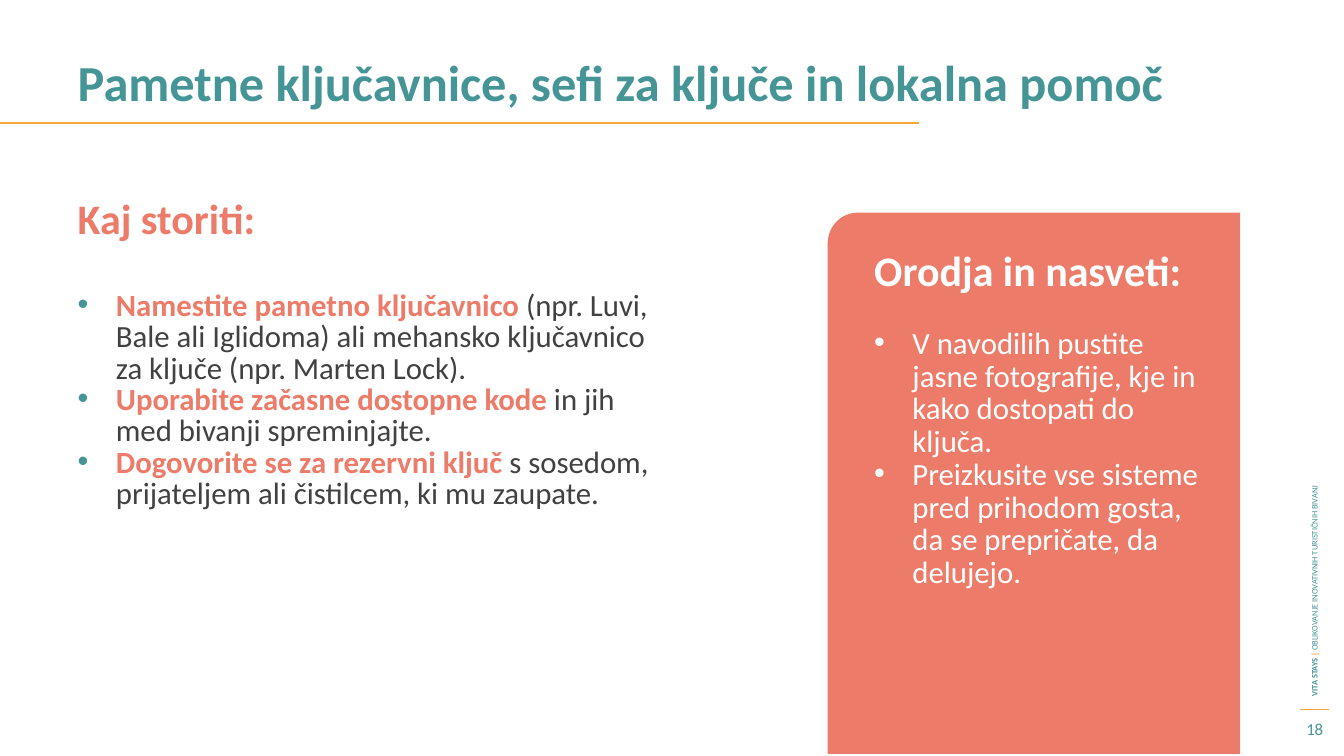
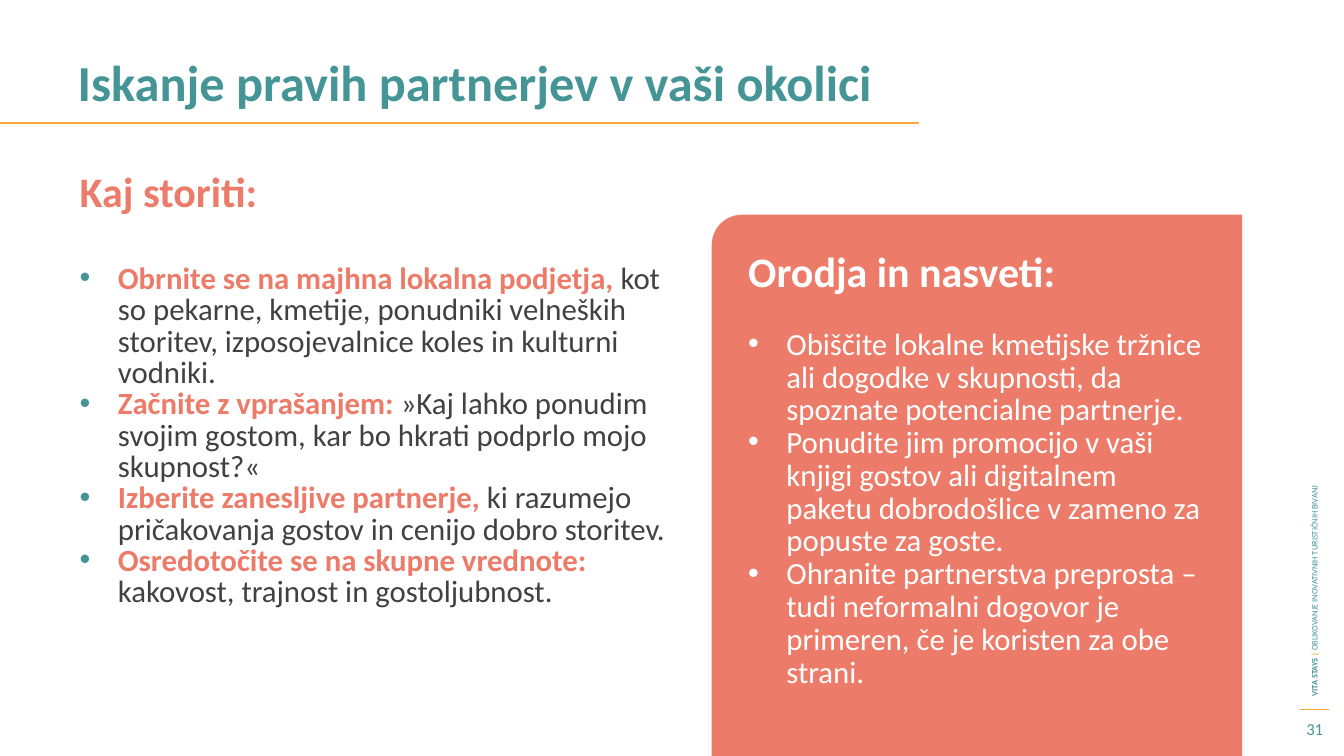
from lxml.etree import SubElement
from pptx import Presentation
from pptx.dml.color import RGBColor
from pptx.enum.shapes import MSO_CONNECTOR, MSO_SHAPE
from pptx.enum.text import MSO_ANCHOR, MSO_AUTO_SIZE, PP_ALIGN
from pptx.oxml.ns import qn
from pptx.util import Emu, Pt

EMU_PER_PX = 9144
FONT = "Calibri"
TEAL, AMBER, CORAL = "459597", "FBA63B", "EC7C69"
RULE, INK, WHITE = "FBA63D", "414141", "FFFFFF"
COMPARISON_LAYOUT = 4
INDENT = 38
CORNER = 30
HEADING_GAP = 88
TIPS_GAP = 65

LESSONS = [
    {
        "number": "18",
        "title": "Pametne ključavnice, sefi za ključe in lokalna pomoč",
        "actions_at": (67, 196),
        "actions": [
            ("Namestite pametno ključavnico ",
             "(npr. Luvi, Bale ali Iglidoma) ali mehansko ključavnico za ključe (npr. Marten Lock)."),
            ("Uporabite začasne dostopne kode ", "in jih med bivanji spreminjajte."),
            ("Dogovorite se za rezervni ključ ",
             "s sosedom, prijateljem ali čistilcem, ki mu zaupate."),
        ],
        "panel": (821, 211, 409, 537),
        "tips_at": (857, 255, 345),
        "tips": [
            "V navodilih pustite jasne fotografije, kje in kako dostopati do ključa.",
            "Preizkusite vse sisteme pred prihodom gosta, da se prepričate, da delujejo.",
        ],
    },
    {
        "number": "31",
        "title": "Iskanje pravih partnerjev v vaši okolici",
        "actions_at": (69, 169),
        "actions": [
            ("Obrnite se na majhna lokalna podjetja, ",
             "kot so pekarne, kmetije, ponudniki velneških storitev, izposojevalnice koles in kulturni vodniki."),
            ("Začnite z vprašanjem: ",
             "»Kaj lahko ponudim svojim gostom, kar bo hkrati podprlo mojo skupnost?«"),
            ("Izberite zanesljive partnerje, ",
             "ki razumejo pričakovanja gostov in cenijo dobro storitev."),
            ("Osredotočite se na skupne vrednote: ", "kakovost, trajnost in gostoljubnost."),
        ],
        "panel": (706, 213, 526, 537),
        "tips_at": (732, 256, 475),
        "tips": [
            "Obiščite lokalne kmetijske tržnice ali dogodke v skupnosti, da spoznate potencialne partnerje.",
            "Ponudite jim promocijo v vaši knjigi gostov ali digitalnem paketu dobrodošlice v zameno za popuste za goste.",
            "Ohranite partnerstva preprosta – tudi neformalni dogovor je primeren, če je koristen za obe strani.",
        ],
    },
]


def px(length):
    return Emu(length * EMU_PER_PX)


def color(value):
    return RGBColor.from_string(value)


def apply(target, values):
    for name, value in values.items():
        setattr(target, name, value)


def place(shape, box):
    apply(shape, dict(zip(("left", "top", "width", "height"), map(px, box))))


def add_bullet(paragraph, tint):
    properties = paragraph._p.get_or_add_pPr()
    properties.set("marL", str(px(INDENT)))
    properties.set("indent", str(px(-INDENT)))
    bullet_color = SubElement(properties, qn("a:buClr"))
    SubElement(bullet_color, qn("a:srgbClr"), val=tint)
    SubElement(properties, qn("a:buFont"), typeface="Arial")
    SubElement(properties, qn("a:buChar"), char="•")


def write(shape, paragraphs, size, leading=None, bullet=None,
          align=PP_ALIGN.LEFT, anchor=MSO_ANCHOR.TOP):
    frame = shape.text_frame
    apply(frame, {"word_wrap": True, "auto_size": MSO_AUTO_SIZE.NONE,
                  "vertical_anchor": anchor})
    for index, parts in enumerate(paragraphs):
        paragraph = frame.add_paragraph() if index else frame.paragraphs[0]
        if bullet:
            add_bullet(paragraph, bullet)
        apply(paragraph, {"alignment": align, "space_before": Pt(0)})
        if leading:
            paragraph.line_spacing = Pt(leading)
        for text, tint, bold in parts:
            run = paragraph.add_run()
            run.text = text
            apply(run.font, {"name": FONT, "size": Pt(size), "bold": bold})
            run.font.color.rgb = color(tint)


def fill_placeholder(slide, idx, box, paragraphs, size, leading, bullet=None):
    placeholder = slide.placeholders[idx]
    place(placeholder, box)
    write(placeholder, paragraphs, size, leading, bullet)


def add_label(slide, box, parts, size, align=PP_ALIGN.LEFT):
    label = slide.shapes.add_textbox(*map(px, box))
    write(label, [parts], size, align=align, anchor=MSO_ANCHOR.MIDDLE)
    return label


def add_rule(slide, left, right, y, tint, weight):
    rule = slide.shapes.add_connector(
        MSO_CONNECTOR.STRAIGHT, px(left), px(y), px(right), px(y))
    rule.line.color.rgb = color(tint)
    rule.line.width = Pt(weight)
    SubElement(rule._element.spPr, qn("a:effectLst"))


def add_panel(slide, box):
    panel = slide.shapes.add_shape(MSO_SHAPE.ROUND_1_RECTANGLE, *map(px, box))
    panel.adjustments[0] = CORNER / min(box[2:])
    panel._element.spPr.get_or_add_xfrm().set("flipH", "1")
    panel.shadow.inherit = False
    panel.fill.solid()
    panel.fill.fore_color.rgb = color(CORAL)
    panel.line.fill.background()
    slide.shapes._spTree.insert(2, panel._element)


def add_frame(slide, number):
    add_rule(slide, 0, 911, 122, AMBER, 1.5)
    add_rule(slide, 1289, 1318, 704, RULE, 0.75)
    series = add_label(slide, (1015, 402, 577, 20), [
        ("VITA STAYS ", TEAL, True),
        ("| ", AMBER, True),
        ("OBLIKOVANJE INOVATIVNIH TURISTIČNIH BIVANJ", TEAL, False),
    ], 6)
    series.rotation = 270
    add_label(slide, (1278, 706, 52, 34), [(number, TEAL, False)], 12, PP_ALIGN.CENTER)


def add_lesson(deck, lesson):
    slide = deck.slides.add_slide(deck.slide_layouts[COMPARISON_LAYOUT])
    add_panel(slide, lesson["panel"])
    fill_placeholder(slide, 0, (67, 54, 1200, 88),
                     [[(lesson["title"], TEAL, True)]], 36, 37.2)

    left, top = lesson["actions_at"]
    fill_placeholder(slide, 1, (left, top, 614, HEADING_GAP),
                     [[("Kaj storiti:", CORAL, True)]], 30, 29)
    actions = [[(lead, CORAL, True), (rest, INK, False)] for lead, rest in lesson["actions"]]
    fill_placeholder(slide, 2, (left, top + HEADING_GAP, 614, 400), actions, 22, 22.4, TEAL)

    left, top, width = lesson["tips_at"]
    fill_placeholder(slide, 3, (left, top, width, TIPS_GAP),
                     [[("Orodja in nasveti:", WHITE, True)]], 30, 23.4)
    tips = [[(tip, WHITE, False)] for tip in lesson["tips"]]
    fill_placeholder(slide, 4, (left, top + TIPS_GAP, width, 400), tips, 22, 23.4, WHITE)
    add_frame(slide, lesson["number"])


def main():
    deck = Presentation()
    apply(deck, {"slide_width": px(1333), "slide_height": px(750)})
    for lesson in LESSONS:
        add_lesson(deck, lesson)
    deck.save("out.pptx")


if __name__ == "__main__":
    main()
